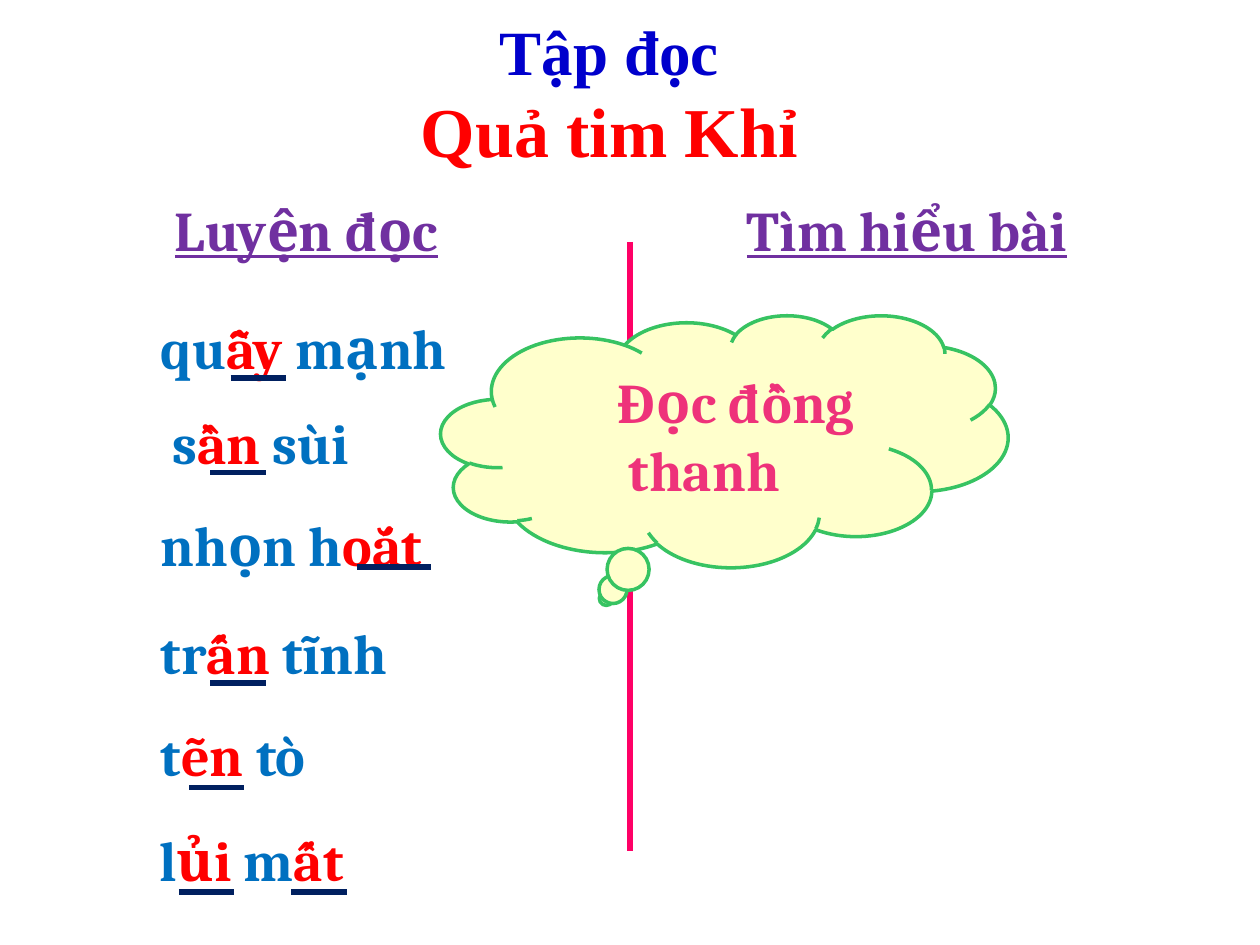
from lxml.etree import SubElement
from pptx import Presentation
from pptx.dml.color import RGBColor
from pptx.enum.shapes import MSO_CONNECTOR, MSO_SHAPE
from pptx.enum.text import MSO_ANCHOR, MSO_AUTO_SIZE, PP_ALIGN
from pptx.oxml.ns import qn
from pptx.util import Inches, Pt

NAVY = RGBColor(0x00, 0x20, 0x60)
DEEP_BLUE = RGBColor(0x00, 0x00, 0xCC)
BLUE = RGBColor(0x00, 0x70, 0xC0)
RED = RGBColor(0xFF, 0x00, 0x00)
PURPLE = RGBColor(0x70, 0x30, 0xA0)
PINK = RGBColor(0xFF, 0x00, 0x66)
ROSE = RGBColor(0xEE, 0x32, 0x7A)
CREAM = RGBColor(0xFF, 0xFF, 0xCC)
GREEN = RGBColor(0x37, 0xC3, 0x62)

HEADINGS = [("Luyện đọc", 1.29, 2.54), ("Tìm hiểu bài", 5.83, 2.92)]

# left, top, width, spans; every second span is the stressed sound
WORDS = [
    (1.08, 2.44, 2.75, [" qu", "ẫy", " mạnh"]),
    (1.17, 3.19, 2.5, [" s", "ần", " sùi"]),
    (1.08, 4, 2.92, [" nhọn h", "oắt"]),
    (1.08, 4.86, 2.5, [" tr", "ấn", " tĩnh"]),
    (1.08, 5.67, 2.12, [" t", "ẽn", " tò"]),
    (1.07, 6.5, 2.35, [" l", "ủi", " m", "ất"]),
]

# left, top, length
UNDERLINES = [
    (1.83, 3, 0.44), (1.67, 3.75, 0.44), (2.83, 4.5, 0.59), (1.67, 5.42, 0.44),
    (1.5, 6.25, 0.44), (1.42, 7.08, 0.44), (2.31, 7.08, 0.44),
]


def format_span(span, color, size=32, font="Cambria"):
    span.font.name = font
    span.font.size = Pt(size)
    span.font.bold = True
    span.font.color.rgb = color


def add_title(page):
    title = page.shapes.title
    title.left, title.top = Inches(2.67), Inches(0.04)
    title.width, title.height = Inches(4.33), Inches(1.38)
    frame = title.text_frame
    frame.text = "Tập đọc\nQuả tim Khỉ"
    frame.auto_size = MSO_AUTO_SIZE.SHAPE_TO_FIT_TEXT
    frame.vertical_anchor = MSO_ANCHOR.MIDDLE
    for para, color, size in zip(frame.paragraphs, (DEEP_BLUE, RED), (36, 40)):
        para.alignment = PP_ALIGN.CENTER
        para.line_spacing = 1.0
        para.space_before = Pt(0)
        format_span(para.runs[0], color, size, "Times New Roman")


def add_text(page, left, top, width, texts, colors, underline=False):
    box = page.shapes.add_textbox(Inches(left), Inches(top), Inches(width), Inches(0.64))
    frame = box.text_frame
    frame.word_wrap = True
    frame.auto_size = MSO_AUTO_SIZE.SHAPE_TO_FIT_TEXT
    for index, text in enumerate(texts):
        span = frame.paragraphs[0].add_run()
        span.text = text
        format_span(span, colors[index % len(colors)])
        if underline:
            span.font.underline = True


def add_line(page, start, end, color):
    line = page.shapes.add_connector(
        MSO_CONNECTOR.STRAIGHT, *(Inches(value) for value in start + end))
    line.line.color.rgb = color
    line.line.width = Pt(3)
    SubElement(line._element.spPr, qn("a:effectLst"))


def add_cloud(page):
    cloud = page.shapes.add_shape(
        MSO_SHAPE.CLOUD_CALLOUT, Inches(3.5), Inches(2.5), Inches(4.5), Inches(2))
    cloud.shadow.inherit = False
    cloud.fill.solid()
    cloud.fill.fore_color.rgb = CREAM
    cloud.line.color.rgb = GREEN
    cloud.line.width = Pt(2)
    frame = cloud.text_frame
    frame.text = "Đọc đồng thanh"
    frame.word_wrap = True
    frame.vertical_anchor = MSO_ANCHOR.MIDDLE
    para = frame.paragraphs[0]
    para.alignment = PP_ALIGN.CENTER
    # First-line indent
    para._p.get_or_add_pPr().set("indent", str(Inches(0.5)))
    format_span(para.runs[0], ROSE)


def main():
    deck = Presentation()
    deck.slide_width, deck.slide_height = Inches(10), Inches(7.5)
    page = deck.slides.add_slide(deck.slide_layouts[5])

    # Title, column headings and divider
    add_title(page)
    for text, left, width in HEADINGS:
        add_text(page, left, 1.5, width, [text], [PURPLE], underline=True)
    add_line(page, (5, 1.92), (5, 6.75), PINK)

    # Reading words
    for left, top, width, texts in WORDS:
        add_text(page, left, top, width, texts, [BLUE, RED])

    # Callout, then marks under the stressed sounds
    add_cloud(page)
    for left, top, length in UNDERLINES:
        add_line(page, (left, top), (left + length, top), NAVY)

    deck.save("out.pptx")


if __name__ == "__main__":
    main()
